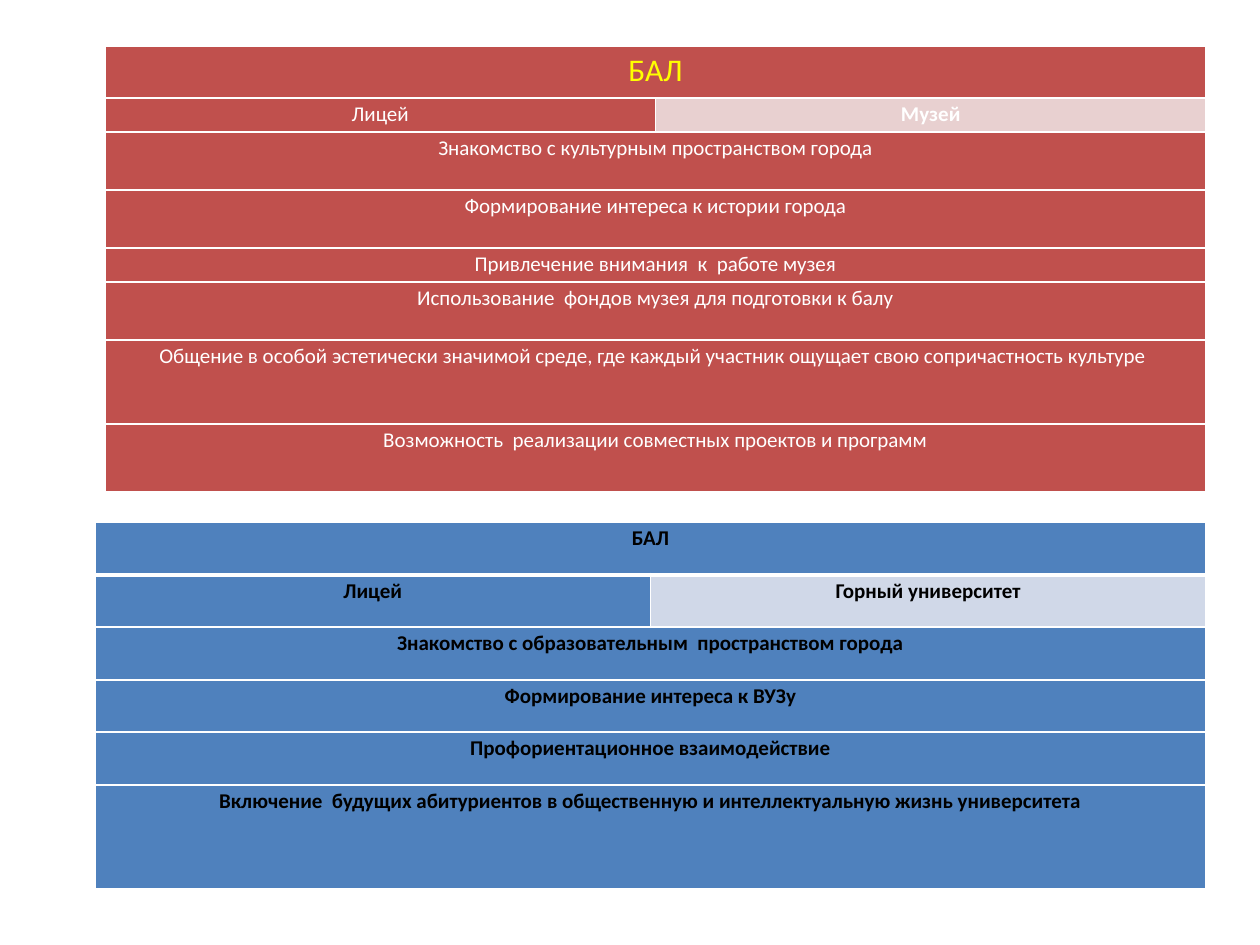
import pptx
import pptx.dml.color
import pptx.enum.text
import pptx.oxml
import pptx.oxml.ns
import pptx.util

RGBColor = pptx.dml.color.RGBColor
WHITE = RGBColor(0xFF, 0xFF, 0xFF)
BLACK = RGBColor(0x00, 0x00, 0x00)
YELLOW = RGBColor(0xFF, 0xFF, 0x00)
RED = RGBColor(0xC0, 0x50, 0x4D)
PALE_RED = RGBColor(0xE8, 0xD0, 0xD0)
BLUE = RGBColor(0x4F, 0x81, 0xBD)
PALE_BLUE = RGBColor(0xD0, 0xD8, 0xE8)

PX_PER_INCH = 126

# One string fills a whole row, a pair fills its two columns
MUSEUM_ROWS = [
    "БАЛ",
    ("Лицей", "Музей"),
    "Знакомство с культурным пространством города",
    "Формирование интереса к истории города",
    "Привлечение внимания  к  работе музея",
    "Использование  фондов музея для подготовки к балу",
    "Общение в особой эстетически значимой среде, где каждый участник "
    "ощущает свою сопричастность культуре ",
    "Возможность  реализации совместных проектов и программ",
]
UNIVERSITY_ROWS = [
    "БАЛ",
    ("Лицей", "Горный университет"),
    "Знакомство с образовательным  пространством города",
    "Формирование интереса к ВУЗу",
    "Профориентационное взаимодействие",
    "Включение  будущих абитуриентов в общественную и интеллектуальную "
    "жизнь университета",
]


def px(length):
    return pptx.util.Emu(round(length * 914400 / PX_PER_INCH))


def apply(target, **values):
    for name, value in values.items():
        setattr(target, name, value)


def set_borders(cell, **widths):
    """Draw white cell borders; widths are points for sides L, R, T, B."""
    properties = cell._tc.get_or_add_tcPr()
    for position, side in enumerate("LRTB"):
        width = pptx.util.Pt(widths.get(side, 1))
        line = pptx.oxml.parse_xml(
            f'<a:ln{side} {pptx.oxml.ns.nsdecls("a")} w="{width}"><a:solidFill>'
            f'<a:srgbClr val="{WHITE}"/></a:solidFill></a:ln{side}>')
        properties.insert(position, line)


def write_cell(cell, text, fill, margin, font):
    apply(cell, margin_left=px(margin), margin_right=px(margin),
          margin_top=0, margin_bottom=0)
    cell.fill.solid()
    cell.fill.fore_color.rgb = fill
    para = cell.text_frame.paragraphs[0]
    apply(para, alignment=pptx.enum.text.PP_ALIGN.CENTER, line_spacing=1.15)
    span = para.add_run()
    span.text = text
    apply(span.font, name="Calibri", size=pptx.util.Pt(font["size"]),
          bold=font["bold"])
    span.font.color.rgb = font["color"]


def add_ball_table(page, rows, left, top, width, heights, fill, pale_fill,
                   margin, header_line, font, header_font, partner_font):
    frame = page.shapes.add_table(len(rows), 2, px(left), px(top),
                                  px(width), px(sum(heights)))
    table = frame.table
    apply(table, first_row=False, horz_banding=False)
    for column in table.columns:
        column.width = px(width / 2)

    for index, (content, height) in enumerate(zip(rows, heights)):
        table.rows[index].height = px(height)
        first, second = table.cell(index, 0), table.cell(index, 1)
        # The line under the header is shared by the first two rows
        lines = {0: {"B": header_line}, 1: {"T": header_line}}.get(index, {})
        for cell in (first, second):
            set_borders(cell, **lines)
        if isinstance(content, tuple):
            write_cell(first, content[0], fill, margin, font)
            write_cell(second, content[1], pale_fill, margin, partner_font)
        else:
            first.merge(second)
            write_cell(first, content, fill, margin,
                       header_font if index == 0 else font)


def main():
    deck = pptx.Presentation()
    apply(deck, slide_width=px(1260), slide_height=px(945))
    page = deck.slides.add_slide(deck.slide_layouts[6])

    # Lyceum and museum
    plain = {"size": 12, "bold": False, "color": WHITE}
    add_ball_table(
        page, MUSEUM_ROWS, left=105, top=46, width=1101,
        heights=[52, 34, 58, 58, 34, 58, 84, 68],
        fill=RED, pale_fill=PALE_RED, margin=9, header_line=1, font=plain,
        header_font={**plain, "size": 18, "color": YELLOW},
        partner_font={**plain, "bold": True})

    # Lyceum and university
    strong = {"size": 12, "bold": True, "color": BLACK}
    add_ball_table(
        page, UNIVERSITY_ROWS, left=95, top=522, width=1111,
        heights=[53, 52, 53, 52, 53, 104],
        fill=BLUE, pale_fill=PALE_BLUE, margin=10, header_line=3, font=strong,
        header_font=strong, partner_font=strong)

    deck.save("out.pptx")


if __name__ == "__main__":
    main()
